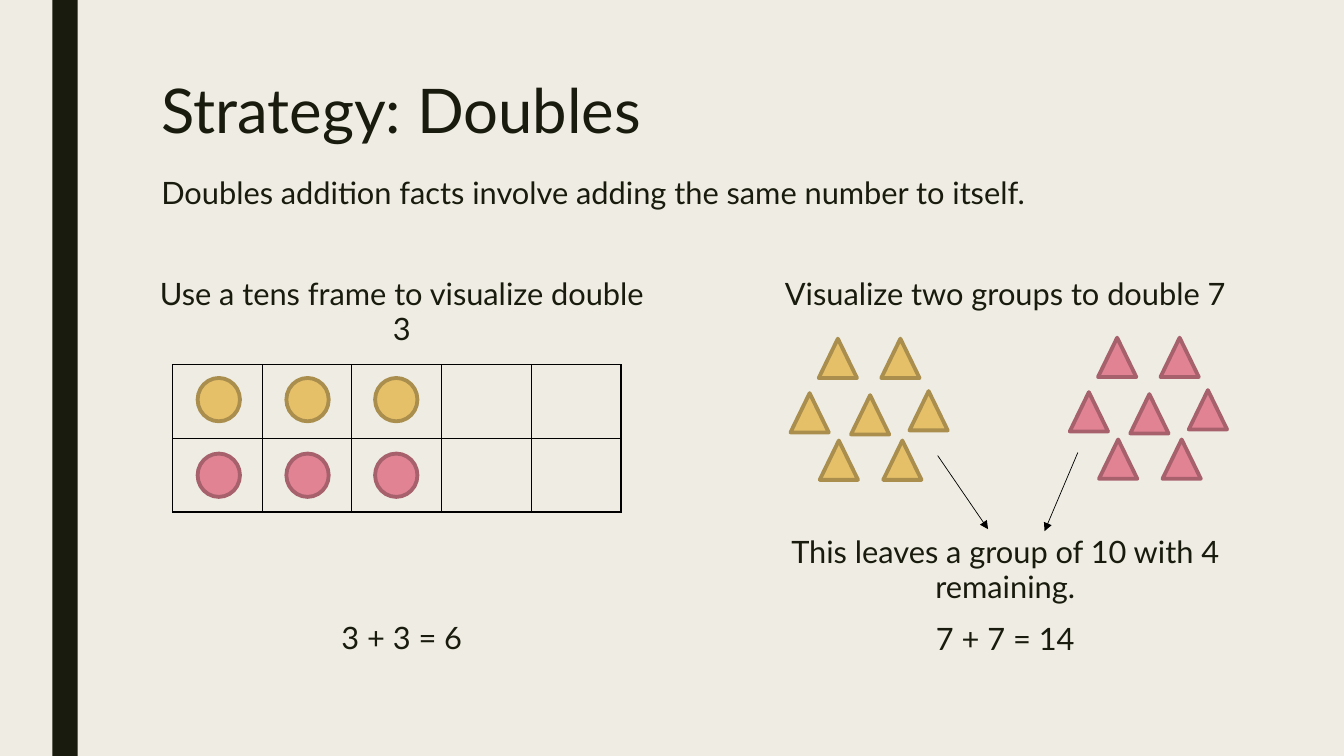
from dataclasses import dataclass

from lxml.etree import SubElement
from pptx import Presentation
from pptx.dml.color import RGBColor
from pptx.enum.shapes import MSO_CONNECTOR, MSO_SHAPE
from pptx.enum.text import MSO_ANCHOR, MSO_AUTO_SIZE, PP_ALIGN
from pptx.oxml.ns import qn
from pptx.util import Inches, Pt


@dataclass(frozen=True)
class Theme:
    font: str = "Lato"
    title_size: int = 44
    body_size: int = 22
    background: str = "EFEDE3"
    ink: str = "191B0E"
    black: str = "000000"
    yellow: tuple = ("E6C069", "AA8E4E")
    pink: tuple = ("E28394", "A7616D")


THEME = Theme()
CLUSTER = [(0.28, 0), (0.9, 0), (0, 0.54), (0.6, 0.56),
           (1.18, 0.52), (0.29, 1.01), (0.92, 1.01)]


def rgb(value):
    return RGBColor.from_string(value)


def add_shape(slide, kind, box, fill, line=None):
    sp = slide.shapes.add_shape(kind, *map(Inches, box))
    sp.shadow.inherit = False
    sp.fill.solid()
    sp.fill.fore_color.rgb = rgb(fill)
    if line:
        sp.line.color.rgb = rgb(line)
        sp.line.width = Pt(2.75)
    else:
        sp.line.fill.background()


def style_paragraph(p, size, spacing, align, before=0):
    p.font.name = THEME.font
    p.font.size = Pt(size)
    p.font.color.rgb = rgb(THEME.ink)
    p.line_spacing = spacing
    p.alignment = align
    p.space_before = Pt(before)


def add_text(slide, box, *lines):
    tf = slide.shapes.add_textbox(*map(Inches, box)).text_frame
    tf.word_wrap = True
    tf.text = "\n".join(lines)
    for i, p in enumerate(tf.paragraphs):
        style_paragraph(p, THEME.body_size, 0.94, PP_ALIGN.CENTER, 12 if i else 0)


def add_arrow(slide, start, end):
    cxn = slide.shapes.add_connector(
        MSO_CONNECTOR.STRAIGHT, *map(Inches, (*start, *end)))
    cxn.line.color.rgb = rgb(THEME.black)
    cxn.line.width = Pt(0.5)
    SubElement(cxn.line._get_or_add_ln(), qn("a:tailEnd"), type="triangle")
    SubElement(cxn._element.spPr, qn("a:effectLst"))


def add_title(slide, box, title, subtitle):
    sp = slide.shapes.title
    sp.left, sp.top, sp.width, sp.height = map(Inches, box)
    tf = sp.text_frame
    tf.word_wrap = True
    tf.auto_size = MSO_AUTO_SIZE.NONE
    tf.vertical_anchor = MSO_ANCHOR.TOP
    tf.text = f"{title}\n{subtitle}"
    heading, detail = tf.paragraphs
    style_paragraph(heading, THEME.title_size, 0.89, PP_ALIGN.LEFT)
    style_paragraph(detail, THEME.body_size, 0.89, PP_ALIGN.LEFT, 23)


def border_cell(cell):
    tc_pr = cell._tc.get_or_add_tcPr()
    for side in ("lnL", "lnR", "lnT", "lnB"):
        ln = SubElement(tc_pr, qn(f"a:{side}"), w=str(Pt(1)))
        fill = SubElement(ln, qn("a:solidFill"))
        SubElement(fill, qn("a:srgbClr"), val=THEME.black)
    cell.fill.background()


def add_tens_frame(slide, left, top):
    rows, cols, cell_w, cell_h = 2, 5, 0.89, 0.73
    table = slide.shapes.add_table(
        rows, cols, Inches(left), Inches(top),
        Inches(cols * cell_w), Inches(rows * cell_h)).table
    table.first_row = table.horz_banding = False
    for col in table.columns:
        col.width = Inches(cell_w)
    for row in table.rows:
        row.height = Inches(cell_h)
    for cell in table.iter_cells():
        border_cell(cell)
    for row, (fill, line) in enumerate((THEME.yellow, THEME.pink)):
        for col in range(3):
            box = (left + 0.25 + col * 0.88, top + 0.13 + row * 0.75, 0.42, 0.43)
            add_shape(slide, MSO_SHAPE.OVAL, box, fill, line)


def add_triangle_group(slide, left, top, colors):
    for dx, dy in CLUSTER:
        box = (left + dx, top + dy, 0.38, 0.39)
        add_shape(slide, MSO_SHAPE.ISOSCELES_TRIANGLE, box, *colors)


def add_tens_frame_panel(slide, left, top, width):
    add_text(slide, (left, top, width, 0.8),
             "Use a tens frame to visualize double 3")
    add_tens_frame(slide, left + 0.31, top + 0.91)
    add_text(slide, (left, top + 3.41, width, 0.45), "3 + 3 = 6")


def add_groups_panel(slide, left, top, width):
    add_text(slide, (left, top, width, 0.45), "Visualize two groups to double 7")
    add_triangle_group(slide, left + 0.3, top + 0.65, THEME.yellow)
    add_triangle_group(slide, left + 3.07, top + 0.64, THEME.pink)
    add_arrow(slide, (left + 1.76, top + 1.81), (left + 2.26, top + 2.54))
    add_arrow(slide, (left + 3.15, top + 1.78), (left + 2.82, top + 2.56))
    add_text(slide, (left, top + 2.56, width, 1.3),
             "This leaves a group of 10 with 4 remaining.", "7 + 7 = 14")


def build_slide(prs):
    slide = prs.slides.add_slide(prs.slide_layouts[5])
    slide.background.fill.solid()
    slide.background.fill.fore_color.rgb = rgb(THEME.background)
    add_shape(slide, MSO_SHAPE.RECTANGLE, (0.52, 0, 0.25, 7.5), THEME.ink)
    add_title(slide, (1.5, 0.75, 10.5, 1.62), "Strategy: Doubles",
              "Doubles addition facts involve adding the same number to itself.")
    add_tens_frame_panel(slide, 1.4, 2.71, 5.17)
    add_groups_panel(slide, 7.54, 2.71, 4.86)


def main():
    prs = Presentation()
    prs.slide_width, prs.slide_height = Inches(13.33), Inches(7.5)
    build_slide(prs)
    prs.save("out.pptx")


if __name__ == "__main__":
    main()
